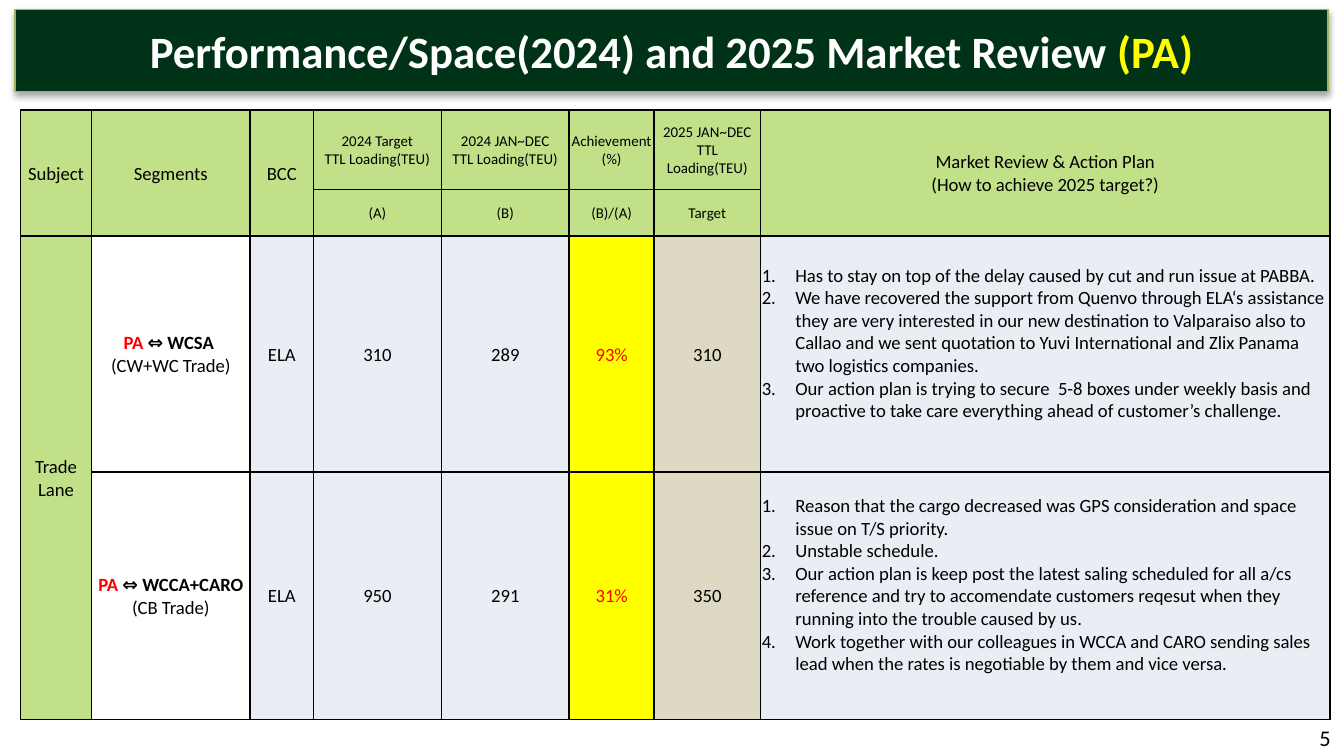
from lxml import etree
from pptx import Presentation
from pptx import util as u
from pptx.dml.color import RGBColor
from pptx.enum import shapes, text
from pptx.oxml import ns

BLACK = RGBColor(0x00, 0x00, 0x00)
WHITE = RGBColor(0xFF, 0xFF, 0xFF)
RED = RGBColor(0xFF, 0x00, 0x00)
YELLOW = RGBColor(0xFF, 0xFF, 0x00)
DARK_GREEN = RGBColor(0x00, 0x32, 0x17)
EDGE_GREEN = RGBColor(0x98, 0xB9, 0x55)
HEADER_GREEN = RGBColor(0xC2, 0xE0, 0x88)
PALE_BLUE = RGBColor(0xE9, 0xED, 0xF4)
TAN = RGBColor(0xDD, 0xD9, 0xC3)

CENTER = text.PP_ALIGN.CENTER
COLUMNS = [38, 85, 34, 68.5, 68.5, 45.5, 57, 305]
ROWS = [42.5, 24, 126.5, 132.5]
BODY_FILLS = [HEADER_GREEN, WHITE, PALE_BLUE, PALE_BLUE, PALE_BLUE, YELLOW, TAN, PALE_BLUE]
TALL_HEADERS = {
    0: ["Subject"],
    1: ["Segments"],
    2: ["BCC"],
    7: ["Market Review & Action Plan", "(How to achieve 2025 target?)"],
}
SPLIT_HEADERS = {
    3: (["2024 Target", "TTL Loading(TEU)"], "(A)"),
    4: (["2024 JAN~DEC", "TTL Loading(TEU)"], "(B)"),
    5: (["Achievement", "(%)"], "(B)/(A)"),
    6: (["2025 JAN~DEC", "TTL Loading(TEU)"], "Target"),
}
LANES = [
    ("⇔ WCSA ", "(CW+WC Trade)", ["ELA", "310", "289", "93%", "310"], [
        "Has to stay on top of the delay caused by cut and run issue at PABBA.",
        "We have recovered the support from Quenvo through ELA‘s assistance they are very "
        "interested in our new destination to Valparaiso also to Callao and we sent quotation "
        "to Yuvi International and Zlix Panama two logistics companies.",
        "Our action plan is trying to secure  5-8 boxes under weekly basis and proactive to "
        "take care everything ahead of customer’s challenge.",
    ]),
    ("⇔ WCCA+CARO", "(CB Trade)", ["ELA", "950", "291", "31%", "350"], [
        "Reason that the cargo decreased was GPS consideration and space issue on T/S priority.",
        "Unstable schedule.",
        "Our action plan is keep post the latest saling scheduled for all a/cs reference and try "
        "to accomendate customers reqesut when they running into the trouble caused by us.",
        "Work together with our colleagues in WCCA and CARO sending sales lead when the rates "
        "is negotiable by them and vice versa.",
    ]),
]


def write(frame, lines, size=10, color=BLACK, bold=False, align=CENTER, numbered=False):
    frame.word_wrap = True
    for index, line in enumerate(lines):
        para = frame.paragraphs[0] if index == 0 else frame.add_paragraph()
        para.alignment = align
        if numbered:
            number(para)
        for part in [(line, {})] if isinstance(line, str) else line:
            words, change = part
            span = para.add_run()
            span.text = words
            span.font.name = "Calibri"
            span.font.size = u.Pt(size)
            span.font.bold = change.get("bold", bold)
            span.font.color.rgb = change.get("color", color)


def number(para):
    properties = para._p.get_or_add_pPr()
    properties.set("marL", str(u.Pt(18)))
    properties.set("indent", str(-u.Pt(18)))
    etree.SubElement(properties, ns.qn("a:buFont"), typeface="+mj-lt")
    etree.SubElement(properties, ns.qn("a:buAutoNum"), type="arabicPeriod")


def outline(cell):
    properties = cell._tc.get_or_add_tcPr()
    for side in ("lnL", "lnR", "lnT", "lnB"):
        line = etree.SubElement(properties, ns.qn("a:" + side), w=str(u.Pt(1)))
        fill = etree.SubElement(line, ns.qn("a:solidFill"))
        etree.SubElement(fill, ns.qn("a:srgbClr"), val=str(BLACK))


def paint(cell, color):
    outline(cell)
    cell.fill.solid()
    cell.fill.fore_color.rgb = color
    cell.vertical_anchor = text.MSO_ANCHOR.MIDDLE
    cell.margin_left = cell.margin_right = cell.margin_top = u.Pt(0.72)
    cell.margin_bottom = u.Pt(0)


def add_shadow(shape):
    effects = etree.SubElement(shape._element.spPr, ns.qn("a:effectLst"))
    shadow = etree.SubElement(
        effects, ns.qn("a:outerShdw"), blurRad=str(u.Pt(3.1)), dist=str(u.Pt(1.8)),
        dir="5400000", rotWithShape="0")
    color = etree.SubElement(shadow, ns.qn("a:srgbClr"), val=str(BLACK))
    etree.SubElement(color, ns.qn("a:alpha"), val="35000")


def add_banner(page):
    banner = page.shapes.add_shape(
        shapes.MSO_SHAPE.RECTANGLE, u.Pt(8), u.Pt(5), u.Pt(703.5), u.Pt(44))
    banner.fill.solid()
    banner.fill.fore_color.rgb = DARK_GREEN
    banner.line.color.rgb = EDGE_GREEN
    banner.line.width = u.Pt(0.75)
    add_shadow(banner)
    banner.text_frame.vertical_anchor = text.MSO_ANCHOR.MIDDLE
    title = [("Performance/Space(2024) and 2025 Market Review ", {}), ("(PA)", {"color": YELLOW})]
    write(banner.text_frame, [title], size=24, color=WHITE, bold=True)


def add_grid(page):
    frame = page.shapes.add_table(
        len(ROWS), len(COLUMNS), u.Pt(11), u.Pt(59), u.Pt(sum(COLUMNS)), u.Pt(sum(ROWS)))
    table = frame.table
    table.first_row = table.horz_banding = False
    for column, width in zip(table.columns, COLUMNS):
        column.width = u.Pt(width)
    for index, (row, height) in enumerate(zip(table.rows, ROWS)):
        row.height = u.Pt(height)
        for cell, color in zip(row.cells, BODY_FILLS):
            paint(cell, HEADER_GREEN if index < 2 else color)
    return table


def fill_headers(table):
    for column, lines in TALL_HEADERS.items():
        table.cell(0, column).merge(table.cell(1, column))
        write(table.cell(0, column).text_frame, lines)
    for column, (lines, label) in SPLIT_HEADERS.items():
        write(table.cell(0, column).text_frame, lines, size=8)
        write(table.cell(1, column).text_frame, [label], size=8)
    table.cell(2, 0).merge(table.cell(3, 0))
    write(table.cell(2, 0).text_frame, ["Trade Lane"])


def fill_lanes(table):
    for row, (lane, trade, values, actions) in enumerate(LANES, start=2):
        route = [("PA ", {"color": RED, "bold": True}), (lane, {"bold": True})]
        write(table.cell(row, 1).text_frame, [route, trade])
        for column, value in enumerate(values, start=2):
            color = RED if value.endswith("%") else BLACK
            write(table.cell(row, column).text_frame, [value], color=color)
        plan = table.cell(row, 7)
        plan.margin_bottom = u.Pt(12)
        write(plan.text_frame, actions, align=text.PP_ALIGN.LEFT, numbered=True)


def add_page_number(page):
    box = page.shapes.add_textbox(u.Pt(552), u.Pt(384.5), u.Pt(168), u.Pt(21.5))
    write(box.text_frame, ["5"], size=12, align=text.PP_ALIGN.RIGHT)


def main():
    deck = Presentation()
    deck.slide_width, deck.slide_height = u.Pt(720), u.Pt(405)
    page = deck.slides.add_slide(deck.slide_layouts[6])
    table = add_grid(page)
    fill_headers(table)
    fill_lanes(table)
    add_page_number(page)
    add_banner(page)
    deck.save("out.pptx")


if __name__ == "__main__":
    main()
